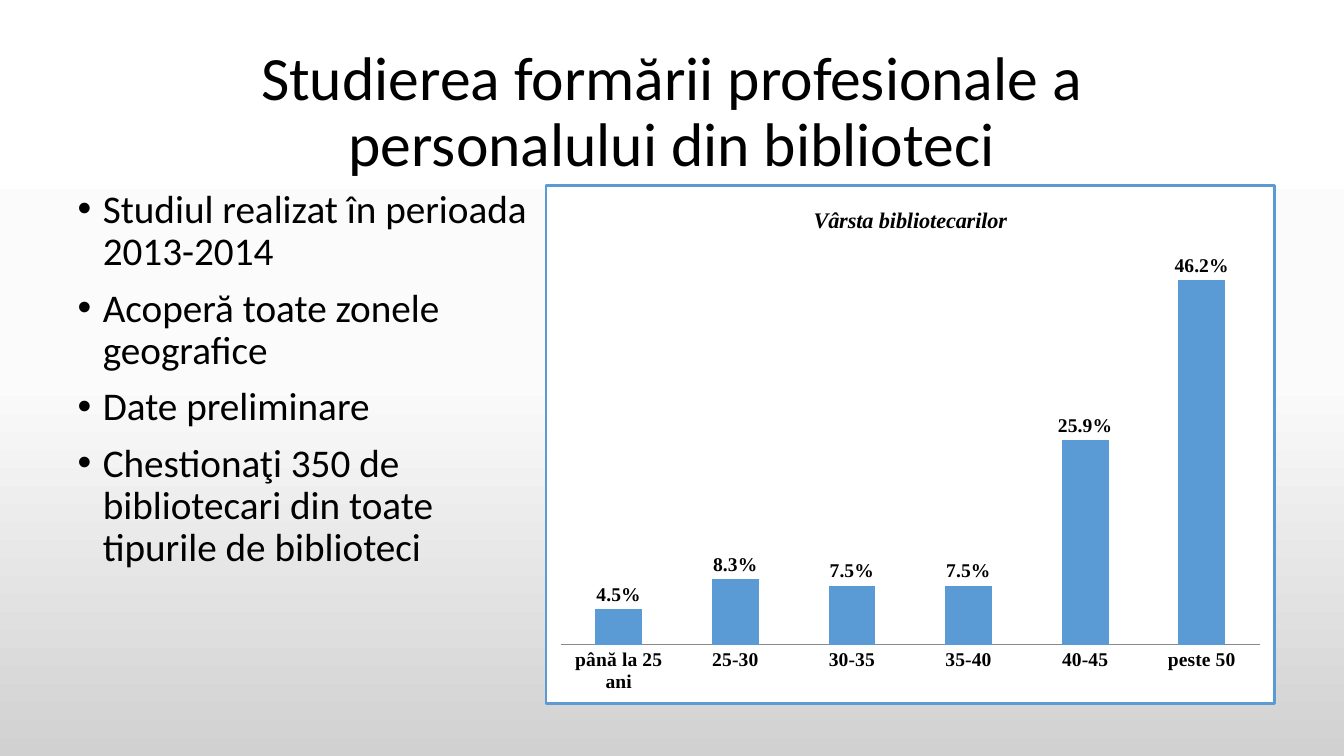
from copy import deepcopy

from lxml import etree
from pptx import Presentation, util as u
from pptx.chart.data import CategoryChartData
from pptx.dml.color import RGBColor
from pptx.enum import chart as charts, text
from pptx.oxml import parse_xml
from pptx.oxml.ns import nsdecls, qn

COLORS = {"text": "000000", "bar": "5B9BD5", "axis": "898989", "panel": "FFFFFF"}
BACKDROP = [(0, "FFFFFF"), (0.5, "FBFBFB"), (1, "D1D1D1")]
TITLE = "Studierea formării profesionale a personalului din biblioteci"
FACTS = [
    "Studiul realizat în perioada 2013-2014",
    "Acoperă toate zonele geografice",
    "Date preliminare",
    "Chestionaţi 350 de bibliotecari din toate tipurile de biblioteci",
]
AGES = {
    "până la 25 ani": 0.045,
    "25-30": 0.083,
    "30-35": 0.075,
    "35-40": 0.075,
    "40-45": 0.259,
    "peste 50": 0.462,
}


def apply(target, **values):
    """Set each given value as an attribute of the target."""
    for name, value in values.items():
        setattr(target, name, value)


class StudySlide:
    """Holds the style and the current slide."""

    heading = {"name": "Calibri", "size": u.Pt(44)}
    listing = {"name": "Calibri", "size": u.Pt(28)}
    labels = {"name": "Times New Roman", "bold": True}

    def __init__(self, deck):
        """Add a title and content slide to the deck."""
        self.slide = deck.slides.add_slide(deck.slide_layouts[1])

    def style(self, font, **values):
        """Format a font in the text colour."""
        apply(font, **values)
        font.color.rgb = RGBColor.from_string(COLORS["text"])

    def place(self, holder, left, top, width, height):
        """Move a placeholder to a box in points."""
        apply(holder, left=u.Pt(left), top=u.Pt(top),
              width=u.Pt(width), height=u.Pt(height))
        apply(holder.text_frame, word_wrap=True, auto_size=text.MSO_AUTO_SIZE.NONE)
        return holder.text_frame

    def background(self, stops):
        """Fill the slide with a vertical gradient."""
        fill = self.slide.background.fill
        fill.gradient()
        fill.gradient_angle = 270
        stop_list = next(self.slide.element.iter(qn("a:gsLst")))
        stop_list.insert(1, deepcopy(stop_list[0]))
        for stop, (position, color) in zip(fill.gradient_stops, stops):
            stop.position = position
            stop.color.rgb = RGBColor.from_string(color)

    def title(self, words, *box):
        """Write the centred title."""
        frame = self.place(self.slide.shapes.title, *box)
        frame.vertical_anchor = text.MSO_ANCHOR.MIDDLE
        line = frame.paragraphs[0]
        apply(line, alignment=text.PP_ALIGN.CENTER, line_spacing=0.9)
        run = line.add_run()
        run.text = words
        self.style(run.font, **self.heading)

    def bullets(self, facts, *box):
        """Write the bulleted list."""
        frame = self.place(self.slide.placeholders[1], *box)
        for index, fact in enumerate(facts):
            line = frame.add_paragraph() if index else frame.paragraphs[0]
            apply(line, line_spacing=0.9, space_before=u.Pt(10 if index else 0))
            properties = line._p.get_or_add_pPr()
            properties.set("marL", str(u.Pt(18)))
            properties.set("indent", str(-u.Pt(18)))
            etree.SubElement(properties, qn("a:buChar")).set("char", "•")
            run = line.add_run()
            run.text = fact
            self.style(run.font, **self.listing)

    def columns(self, heading, shares, *box):
        """Draw the framed column chart."""
        data = CategoryChartData(number_format="0.0%")
        data.categories = list(shares)
        data.add_series("Series 1", list(shares.values()))
        chart = self.slide.shapes.add_chart(
            charts.XL_CHART_TYPE.COLUMN_CLUSTERED, *map(u.Pt, box), data).chart
        apply(chart, has_legend=False, has_title=True)
        self.style(chart.font, size=u.Pt(11), **self.labels)
        self.frame(chart)

        run = chart.chart_title.text_frame.paragraphs[0].add_run()
        run.text = heading
        self.style(run.font, size=u.Pt(16), italic=True, **self.labels)
        chart.chart_title.include_in_layout = False

        ages, scale = chart.category_axis, chart.value_axis
        apply(ages, major_tick_mark=charts.XL_TICK_MARK.NONE, has_major_gridlines=False)
        ages.format.line.color.rgb = RGBColor.from_string(COLORS["axis"])
        self.style(ages.tick_labels.font, size=u.Pt(14), **self.labels)
        apply(scale, visible=False, has_major_gridlines=False,
              minimum_scale=0, maximum_scale=0.5)

        plot = chart.plots[0]
        apply(plot, gap_width=150, vary_by_categories=False, has_data_labels=True)
        apply(plot.data_labels, show_value=True, number_format="0.0%",
              number_format_is_linked=False,
              position=charts.XL_LABEL_POSITION.OUTSIDE_END)
        self.style(plot.data_labels.font, size=u.Pt(14), **self.labels)
        bars = plot.series[0].format.fill
        bars.solid()
        bars.fore_color.rgb = RGBColor.from_string(COLORS["bar"])

    def frame(self, chart):
        """Give the chart area its fill and border."""
        area = parse_xml(
            f'<c:spPr {nsdecls("c", "a")}>'
            f'<a:solidFill><a:srgbClr val="{COLORS["panel"]}"/></a:solidFill>'
            f'<a:ln w="{u.Pt(2)}"><a:solidFill><a:srgbClr val="{COLORS["bar"]}"/>'
            '</a:solidFill></a:ln></c:spPr>')
        chart.element.find(qn("c:chart")).addnext(area)


def main():
    """Build and save the slide."""
    deck = Presentation()
    apply(deck, slide_width=u.Pt(960), slide_height=u.Pt(540))
    study = StudySlide(deck)
    study.background(BACKDROP)
    study.title(TITLE, 66, 28.75, 828, 104.4)
    study.bullets(FACTS, 48.25, 131.75, 337, 371.5)
    study.columns("Vârsta bibliotecarilor", AGES, 389, 131.75, 522.5, 371.5)
    deck.save("out.pptx")


if __name__ == "__main__":
    main()
